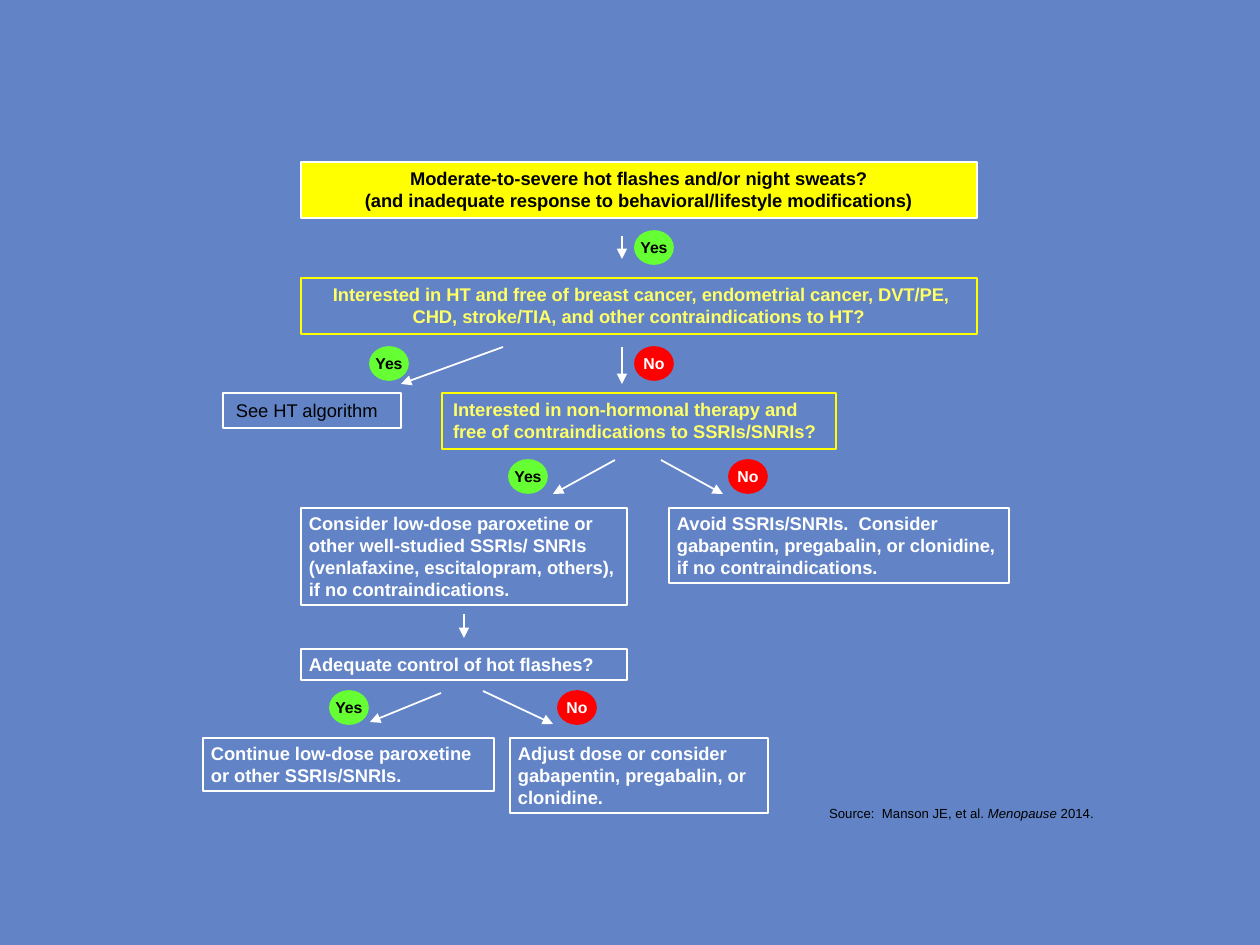
from dataclasses import dataclass

from lxml.etree import SubElement
from pptx import Presentation
from pptx.dml.color import RGBColor as Color
from pptx.enum.shapes import MSO_CONNECTOR as Connector, MSO_SHAPE as Shape
from pptx.enum.text import MSO_ANCHOR as Anchor, MSO_AUTO_SIZE as AutoSize, PP_ALIGN as Align
from pptx.oxml.ns import qn
from pptx.util import Pt

PX = 914400 / 126  # EMU in one px


@dataclass(frozen=True)
class Theme:
    font: str = "Arial"
    back: Color = Color.from_string("6284C6")
    white: Color = Color.from_string("FFFFFF")
    black: Color = Color.from_string("000000")
    yellow: Color = Color.from_string("FFFF00")
    pale: Color = Color.from_string("FFFF66")
    green: Color = Color.from_string("66FF33")
    red: Color = Color.from_string("FF0000")
    body: float = 10.5
    badge: float = 9
    source: float = 7.5
    thin: float = 0.75
    thick: float = 1


THEME = Theme()
WIDE, NARROW, ROOMY = (11, 5), (8, 4), (13, 6)  # text insets: sides, top and bottom


@dataclass(frozen=True)
class Box:
    left: int
    top: int
    width: int
    height: int

    def inner(self, left, top, width, height):
        return Box(self.left + left, self.top + top, width, height)

    def emu(self):
        return [round(v * PX) for v in (self.left, self.top, self.width, self.height)]


# Building blocks
def write(shape, text, size, color, bold=True, align=Align.LEFT, insets=WIDE):
    frame = shape.text_frame
    frame.text = text
    frame.word_wrap = True
    frame.vertical_anchor = Anchor.TOP
    frame.margin_left = frame.margin_right = round(insets[0] * PX)
    frame.margin_top = frame.margin_bottom = round(insets[1] * PX)
    para = frame.paragraphs[0]
    para.alignment = align
    for span in para.runs:
        style(span, size, color, bold)
    return frame


def style(span, size, color, bold=False, italic=False):
    font = span.font
    font.name, font.size, font.bold, font.italic = THEME.font, Pt(size), bold, italic
    font.color.rgb = color


def add_outline(page, kind, box, line, width, fill=None):
    shape = page.shapes.add_shape(kind, *box.emu())
    shape.shadow.inherit = False
    if fill is None:
        shape.fill.background()
    else:
        shape.fill.solid()
        shape.fill.fore_color.rgb = fill
    shape.line.color.rgb = line
    shape.line.width = Pt(width)
    return shape


def add_step(page, box, text, color=THEME.white, line=THEME.white, width=THEME.thin,
             fill=None, **text_style):
    shape = add_outline(page, Shape.RECTANGLE, box, line, width, fill)
    frame = write(shape, text, THEME.body, color, **text_style)
    frame.auto_size = AutoSize.SHAPE_TO_FIT_TEXT


def add_badge(page, box, left, top, answer):
    fill, color = {"Yes": (THEME.green, THEME.black), "No": (THEME.red, THEME.white)}[answer]
    shape = add_outline(page, Shape.OVAL, box.inner(left, top, 38, 33), fill, THEME.thick, fill)
    frame = write(shape, answer, THEME.badge, color, align=Align.CENTER)
    frame.word_wrap = False
    frame.vertical_anchor = Anchor.MIDDLE


def add_arrow(page, box, start, end, width=THEME.thick):
    points = [round(v * PX) for x, y in (start, end) for v in (box.left + x, box.top + y)]
    arrow = page.shapes.add_connector(Connector.STRAIGHT, *points)
    arrow.line.color.rgb = THEME.white
    arrow.line.width = Pt(width)
    SubElement(arrow.line._get_or_add_ln(), qn("a:tailEnd"), type="triangle")
    SubElement(arrow._element.spPr, qn("a:effectLst"))


# Regions of the decision tree
def add_screening(page, box):
    add_step(page, box.inner(0, 0, box.width, 56),
             "Moderate-to-severe hot flashes and/or night sweats?\v"
             "(and inadequate response to behavioral/lifestyle modifications)",
             THEME.black, width=THEME.thick, fill=THEME.yellow, align=Align.CENTER)
    add_arrow(page, box, (321, 74), (321, 97))
    add_badge(page, box, 334, 69, "Yes")
    add_step(page, box.inner(0, 116, box.width, 56),
             " Interested in HT and free of breast cancer, endometrial cancer, DVT/PE, "
             "CHD, stroke/TIA, and other contraindications to HT?",
             THEME.pale, THEME.yellow, align=Align.CENTER)


def add_therapy_choice(page, box):
    add_arrow(page, box, (280, 0), (178, 37))
    add_badge(page, box, 147, 0, "Yes")
    add_arrow(page, box, (399, 0), (399, 37))
    add_badge(page, box, 412, 0, "No")
    add_step(page, box.inner(0, 46, 178, 35), "See HT algorithm", THEME.black,
             bold=False, insets=ROOMY)
    add_step(page, box.inner(219, 46, 394, 56),
             "Interested in non-hormonal therapy and free of contraindications to SSRIs/SNRIs?",
             THEME.pale, THEME.yellow)


def add_treatment(page, box):
    add_arrow(page, box, (314, 0), (252, 34))
    add_badge(page, box, 208, 0, "Yes")
    add_arrow(page, box, (360, 0), (422, 34))
    add_badge(page, box, 428, 0, "No")
    add_step(page, box.inner(0, 48, 326, 97),
             "Consider low-dose paroxetine or other well-studied SSRIs/ SNRIs "
             "(venlafaxine, escitalopram, others), if no contraindications.", insets=NARROW)
    add_step(page, box.inner(368, 48, 340, 75),
             "Avoid SSRIs/SNRIs.  Consider gabapentin, pregabalin, or clonidine, "
             "if no contraindications.", insets=NARROW)


def add_follow_up(page, box):
    add_arrow(page, box, (261, 0), (261, 24), THEME.thin)
    add_step(page, box.inner(98, 35, 326, 31), "Adequate control of hot flashes?",
             insets=NARROW)
    add_arrow(page, box, (238, 79), (167, 108))
    add_badge(page, box, 127, 77, "Yes")
    add_arrow(page, box, (280, 77), (350, 110))
    add_badge(page, box, 355, 77, "No")
    add_step(page, box.inner(0, 124, 291, 53),
             "Continue low-dose paroxetine or other SSRIs/SNRIs.", insets=NARROW)
    add_step(page, box.inner(307, 124, 258, 75),
             "Adjust dose or consider gabapentin, pregabalin, or clonidine.", insets=NARROW)


def add_source(page, box):
    note = page.shapes.add_textbox(*box.emu())
    frame = write(note, "Source:  Manson JE, et al. ", THEME.source, THEME.black,
                  bold=False, insets=ROOMY)
    for text, italic in (("Menopause", True), (" 2014.", False)):
        span = frame.paragraphs[0].add_run()
        span.text = text
        style(span, THEME.source, THEME.black, italic=italic)


def main():
    deck = Presentation()
    deck.slide_width, deck.slide_height = round(1260 * PX), round(945 * PX)
    page = deck.slides.add_slide(deck.slide_layouts[6])
    page.background.fill.solid()
    page.background.fill.fore_color.rgb = THEME.back

    add_screening(page, Box(301, 162, 676, 172))
    add_therapy_choice(page, Box(223, 347, 613, 102))
    add_treatment(page, Box(301, 460, 708, 145))
    add_follow_up(page, Box(203, 614, 565, 199))
    add_source(page, Box(816, 799, 294, 28))
    deck.save("out.pptx")


if __name__ == "__main__":
    main()
